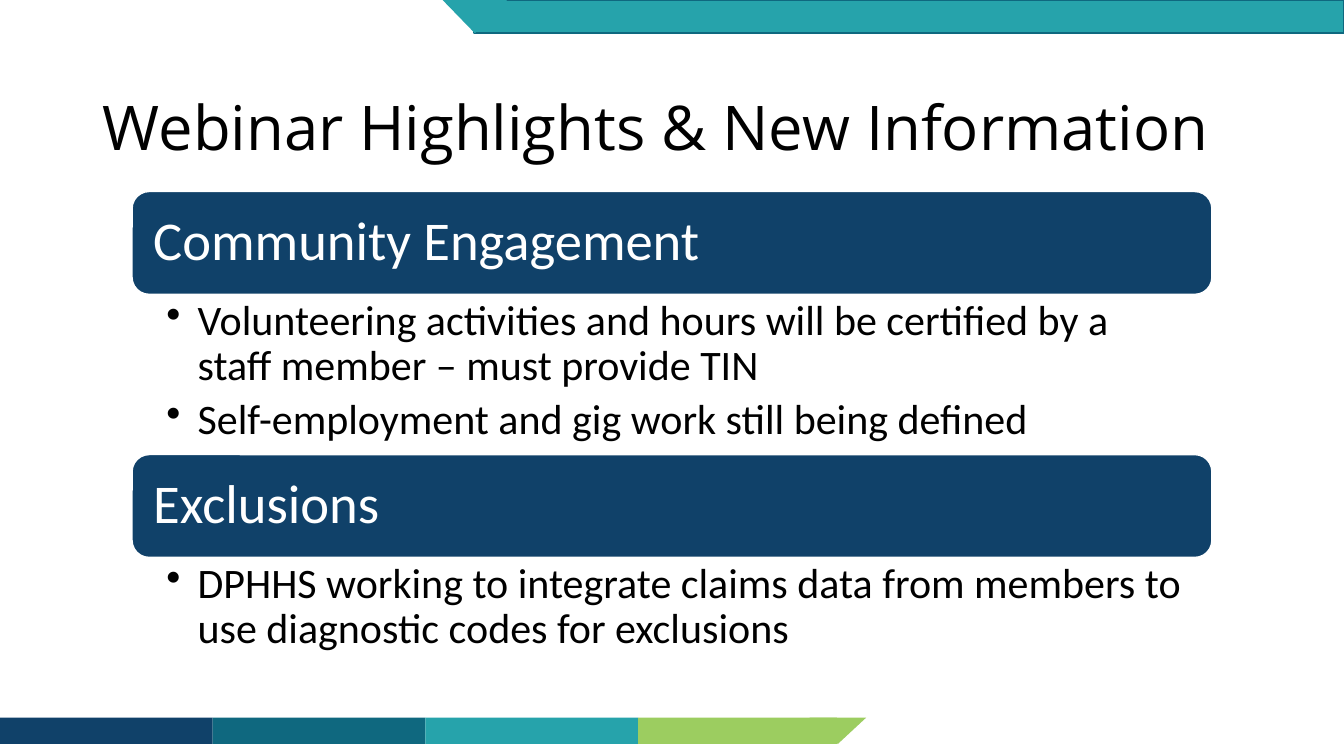
from dataclasses import dataclass

from lxml import etree
from pptx import Presentation
from pptx.dml.color import RGBColor
from pptx.enum.shapes import MSO_SHAPE
from pptx.enum.text import MSO_ANCHOR, PP_ALIGN
from pptx.oxml.ns import qn
from pptx.util import Inches, Pt

RECT = MSO_SHAPE.RECTANGLE
ROUND = MSO_SHAPE.ROUNDED_RECTANGLE
WEDGE = MSO_SHAPE.ISOSCELES_TRIANGLE
TOP, MIDDLE = MSO_ANCHOR.TOP, MSO_ANCHOR.MIDDLE
LEFT = PP_ALIGN.LEFT

COLORS = {
    "navy": "104169",
    "deep": "0F687F",
    "teal": "26A3AB",
    "green": "9CCD60",
    "white": "FFFFFF",
    "black": "000000",
}


@dataclass
class Box:
    left: float
    top: float
    width: float
    height: float


@dataclass
class Style:
    font: str
    size: int
    color: str


@dataclass
class Topic:
    top: float
    head: str
    points: list[str]
    height: float


TITLE = Style("Open Sans", 44, "black")
HEAD = Style("Calibri", 39, "white")
POINT = Style("Calibri", 30, "black")

HEAD_H = 1.02
TOPICS = [
    Topic(1.9, "Community Engagement", [
        "Volunteering activities and hours will be certified by a staff member – must provide TIN",
        "Self-employment and gig work still being defined",
    ], 1.59),
    Topic(4.51, "Exclusions", [
        "DPHHS working to integrate claims data from members to use diagnostic codes for exclusions",
    ], 1.04),
]


def rgb(name: str) -> RGBColor:
    return RGBColor.from_string(COLORS[name])


def lengths(box: Box) -> list[int]:
    return [Inches(n) for n in (box.left, box.top, box.width, box.height)]


def add_block(slide, kind, box: Box, fill: str, line: str = "", turn: int = 0):
    shape = slide.shapes.add_shape(kind, *lengths(box))
    shape.shadow.inherit = False
    shape.rotation = turn
    shape.fill.solid()
    shape.fill.fore_color.rgb = rgb(fill)
    if line:
        shape.line.color.rgb = rgb(line)
        shape.line.width = Pt(1)
    else:
        shape.line.fill.background()
    return shape


def add_bullet(para) -> None:
    props = para._p.get_or_add_pPr()
    props.set("marL", str(Inches(0.31)))
    props.set("indent", str(-Inches(0.31)))
    etree.SubElement(props, qn("a:buChar")).set("char", "•")


def write(shape, lines: list[str], style: Style, pads: tuple, anchor, bullet: bool = False) -> None:
    frame = shape.text_frame
    frame.word_wrap = True
    frame.vertical_anchor = anchor
    (frame.margin_left, frame.margin_top,
     frame.margin_right, frame.margin_bottom) = [Inches(n) for n in pads]
    for i, line in enumerate(lines):
        para = frame.add_paragraph() if i else frame.paragraphs[0]
        para.text = line
        para.alignment = LEFT
        para.line_spacing = 0.9
        if bullet:
            para.level = 1
            para.space_after = Pt(6)
            add_bullet(para)
        para.font.name = style.font
        para.font.size = Pt(style.size)
        para.font.color.rgb = rgb(style.color)


def add_text(slide, box: Box, *args) -> None:
    write(slide.shapes.add_textbox(*lengths(box)), *args)


def add_bands(slide) -> None:
    # Bottom band with a slanted end
    step = 2.11
    for i, color in enumerate(("navy", "deep", "teal", "green")):
        width = 1.97 if color == "green" else step
        add_block(slide, RECT, Box(i * step, 7.12, width, 0.26), color)
    add_block(slide, WEDGE, Box(8.03, 7.12, 0.56, 0.26), "green", turn=180)

    # Top band with a slanted start
    add_block(slide, RECT, Box(4.7, 0, 8.63, 0.33), "teal", "deep")
    add_block(slide, WEDGE, Box(4.39, 0, 0.64, 0.33), "teal", turn=180)


def add_topic(slide, topic: Topic) -> None:
    bar = add_block(slide, ROUND, Box(1.31, topic.top, 10.71, HEAD_H), "navy", "white")
    write(bar, [topic.head], HEAD, (0.16, 0.16, 0.16, 0.16), MIDDLE)
    body = Box(1.31, topic.top + HEAD_H, 10.71, topic.height)
    add_text(slide, body, topic.points, POINT, (0.34, 0.05, 0.3, 0.05), TOP, True)


def main() -> None:
    deck = Presentation()
    deck.slide_width, deck.slide_height = Inches(13.33), Inches(7.5)
    slide = deck.slides.add_slide(deck.slide_layouts[6])

    add_bands(slide)

    # Title
    add_text(slide, Box(0.92, 0.57, 11.5, 1.45), ["Webinar Highlights & New Information"],
             TITLE, (0.1, 0.05, 0.1, 0.05), MIDDLE)

    # Topics with their points
    for topic in TOPICS:
        add_topic(slide, topic)

    deck.save("out.pptx")


if __name__ == "__main__":
    main()
